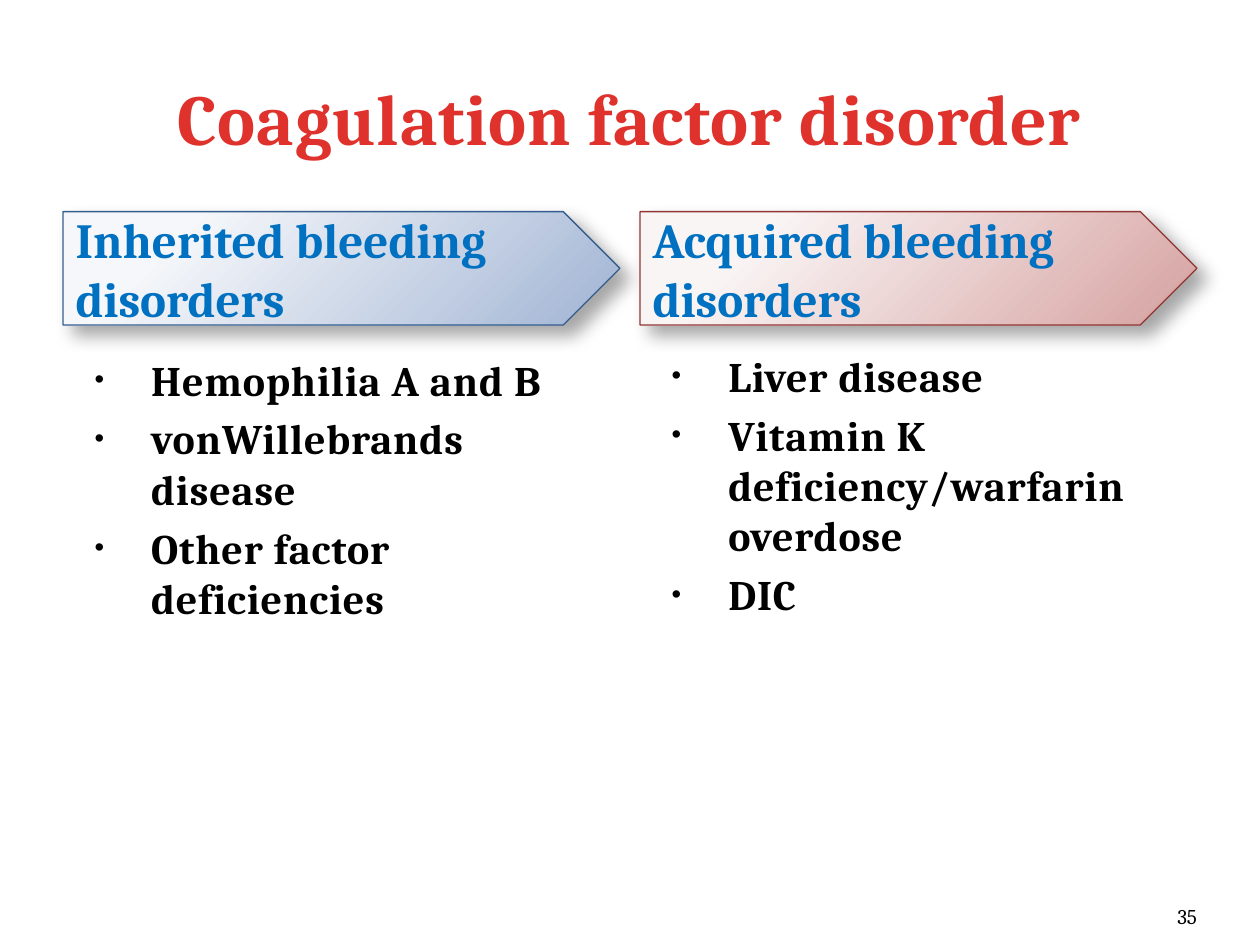
from lxml import etree
from pptx import Presentation
from pptx.dml.color import RGBColor
from pptx.enum.text import MSO_ANCHOR, MSO_AUTO_SIZE, PP_ALIGN
from pptx.oxml import parse_xml
from pptx.oxml.ns import nsdecls, qn
from pptx.util import Pt

MIDDLE, TOP, BOTTOM = MSO_ANCHOR.MIDDLE, MSO_ANCHOR.TOP, MSO_ANCHOR.BOTTOM
LEFT, CENTER, RIGHT = PP_ALIGN.LEFT, PP_ALIGN.CENTER, PP_ALIGN.RIGHT
NO_FIT = MSO_AUTO_SIZE.NONE
COMPARISON = 4

MARGIN = 36
COL_W = 318.24
COL_LEFTS = (MARGIN, 720 - MARGIN - COL_W)
HEADING_TOP, HEADING_H = 120.96, 64.8
LIST_H = 296.64

COLUMNS = [
    dict(heading="Inherited bleeding disorders", light="F5F7FA", dark="A1B4D4",
         line="355D8D", list_top=198.72,
         items=["Hemophilia A and B", "vonWillebrands disease",
                "Other factor deficiencies"]),
    dict(heading="Acquired bleeding disorders", light="FAF5F5", dark="D5A1A0",
         line="903634", list_top=196.56,
         items=["Liver disease", "Vitamin K deficiency/warfarin overdose", "DIC"]),
]


def rgb(value):
    return RGBColor.from_string(value)


def place(sp, box):
    for name, value in zip(("left", "top", "width", "height"), box):
        setattr(sp, name, Pt(value))


def write(sp, lines, size, color, bold=True, align=LEFT, anchor=TOP, spacing=0,
          bullets=False):
    tf = sp.text_frame
    for name, value in dict(word_wrap=True, auto_size=NO_FIT,
                            vertical_anchor=anchor).items():
        setattr(tf, name, value)
    for i, line in enumerate(lines):
        p = tf.add_paragraph() if i else tf.paragraphs[0]
        p.alignment = align
        p.space_before = Pt(0.2 * size if i else 0)
        if bullets:
            add_bullet(p)
        r = p.add_run()
        r.text = line
        for name, value in dict(name="Cambria", size=Pt(size), bold=bold).items():
            setattr(r.font, name, value)
        r.font.color.rgb = rgb(color)
        if spacing:
            r.font._element.set("spc", str(int(spacing * 100)))


def add_bullet(p):
    pPr = p._p.get_or_add_pPr()
    pPr.set("marL", str(Pt(43.2)))
    pPr.set("indent", str(Pt(-32.4)))
    color = etree.SubElement(pPr, qn("a:buClr"))
    etree.SubElement(color, qn("a:srgbClr"), val="000000")
    etree.SubElement(pPr, qn("a:buSzPct"), val="65000")
    etree.SubElement(pPr, qn("a:buFont"), typeface="Arial")
    etree.SubElement(pPr, qn("a:buChar"), char="•")


def style_arrow(sp, light, dark, line):
    """Give a placeholder a pentagon outline, radial gradient, line and shadow."""
    ns = nsdecls("a")
    spPr = sp._element.spPr
    spPr.append(parse_xml(f'<a:prstGeom {ns} prst="homePlate"><a:avLst/></a:prstGeom>'))
    spPr.append(parse_xml(
        f'<a:gradFill {ns} rotWithShape="1"><a:gsLst>'
        f'<a:gs pos="20000"><a:srgbClr val="{light}"/></a:gs>'
        f'<a:gs pos="100000"><a:srgbClr val="{dark}"/></a:gs></a:gsLst>'
        '<a:path path="circle">'
        '<a:fillToRect l="-15000" t="-15000" r="115000" b="115000"/>'
        '</a:path></a:gradFill>'))
    sp.line.color.rgb = rgb(line)
    sp.line.width = Pt(0.75)
    spPr.append(parse_xml(
        f'<a:effectLst {ns}><a:outerShdw blurRad="{Pt(10.2)}" dist="{Pt(8)}" '
        'dir="2700000" algn="tl" rotWithShape="0"><a:srgbClr val="000000">'
        '<a:alpha val="35000"/></a:srgbClr></a:outerShdw></a:effectLst>'))


def add_title(sp, box):
    place(sp, box)
    write(sp, ["Coagulation factor disorder"], 41, "E0322D", align=CENTER,
          anchor=MIDDLE, spacing=0.5)


def add_heading(sp, box, column):
    place(sp, box)
    style_arrow(sp, column["light"], column["dark"], column["line"])
    write(sp, [column["heading"]], 28, "0070C0", anchor=MIDDLE)


def add_list(sp, box, items):
    place(sp, box)
    write(sp, items, 24, "000000", spacing=0.5, bullets=True)


def add_page_number(slide, box, number):
    sp = slide.shapes.add_textbox(*map(Pt, box))
    sp.text_frame.margin_left = sp.text_frame.margin_right = 0
    write(sp, [number], 12, "000000", bold=False, align=RIGHT, anchor=BOTTOM)


def main():
    prs = Presentation()
    prs.slide_width, prs.slide_height = Pt(720), Pt(540)
    slide = prs.slides.add_slide(prs.slide_layouts[COMPARISON])
    title, *bodies = list(slide.placeholders)[:5]
    add_title(title, (MARGIN, 21.6, 648, 90))
    for left, column, heading, body in zip(COL_LEFTS, COLUMNS, bodies[::2], bodies[1::2]):
        add_heading(heading, (left, HEADING_TOP, COL_W, HEADING_H), column)
        add_list(body, (left, column["list_top"], COL_W, LIST_H), column["items"])
    add_page_number(slide, (624.24, 505.44, 59.76, 28.8), "35")
    prs.save("out.pptx")


if __name__ == "__main__":
    main()
